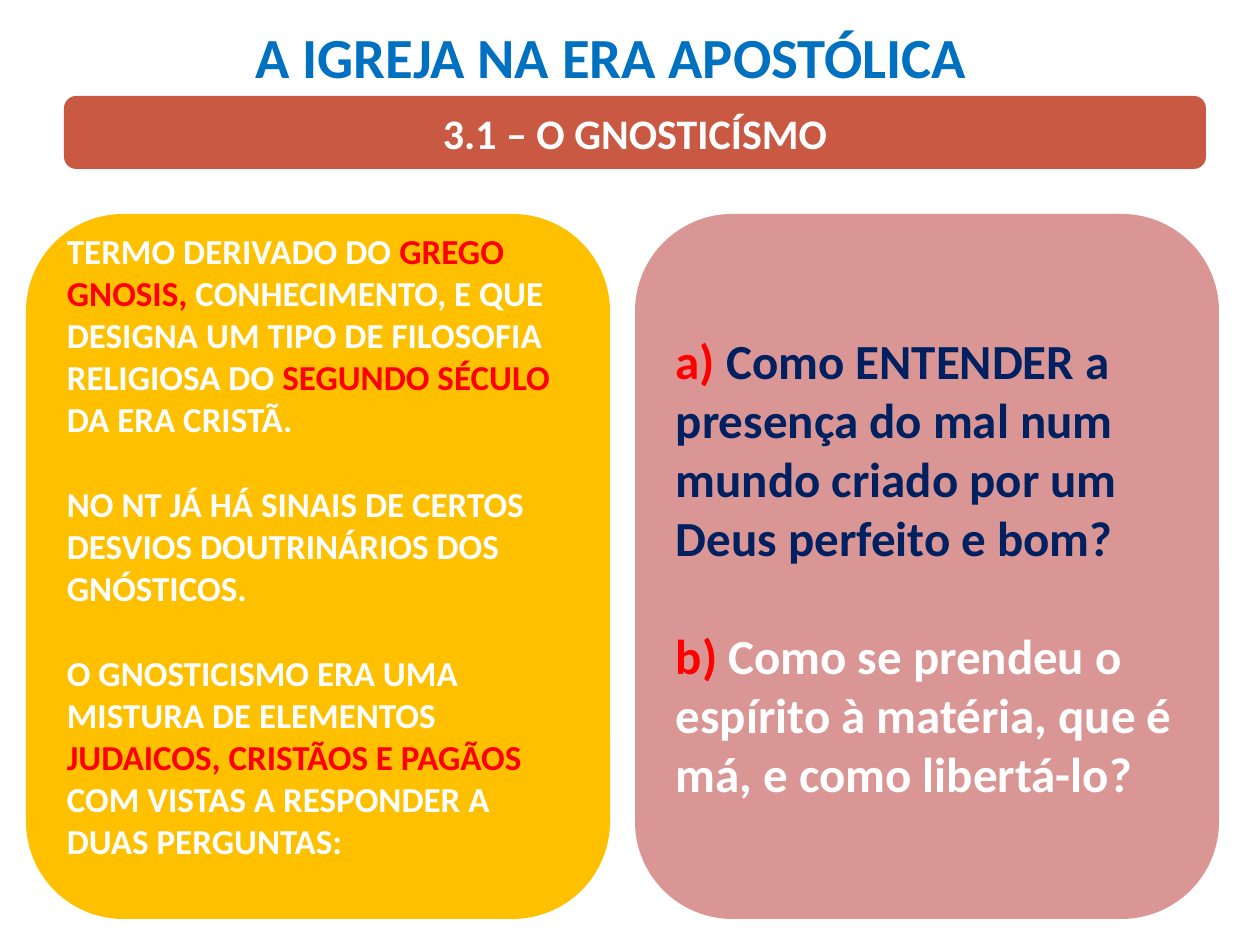
from dataclasses import dataclass

from pptx import Presentation
from pptx.dml.color import RGBColor
from pptx.enum.shapes import MSO_SHAPE
from pptx.enum.text import MSO_ANCHOR, PP_ALIGN
from pptx.slide import Slide
from pptx.util import Emu, Pt

ROUNDED = MSO_SHAPE.ROUNDED_RECTANGLE
TOP, MIDDLE = MSO_ANCHOR.TOP, MSO_ANCHOR.MIDDLE
LEFT, CENTER = PP_ALIGN.LEFT, PP_ALIGN.CENTER
EMU_PER_PX = 914400 / 126
LINE_HEIGHT = 1.22

COLORS = {
    "title": "0070C0",
    "banner": "C95943",
    "definition": "FFC000",
    "questions": "D99694",
    "white": "FFFFFF",
    "red": "FF0000",
    "navy": "002060",
}


def px(length):
    """Turn pixels into EMU."""
    return Emu(round(length * EMU_PER_PX))


@dataclass
class SlideBuilder:
    """Hold the style and the slide, and draw each kind of element."""

    slide: Slide
    font: str = "Calibri"

    def add_text(self, shape, paragraphs, size, align, anchor):
        """Add paragraphs of (text, color) runs, one line apart."""
        frame = shape.text_frame
        frame.word_wrap = True
        frame.vertical_anchor = anchor
        for index, runs in enumerate(paragraphs):
            paragraph = frame.add_paragraph() if index else frame.paragraphs[0]
            paragraph.alignment = align
            if index:
                paragraph.space_before = Pt(round(size * LINE_HEIGHT, 1))
            for text, color in runs:
                run = paragraph.add_run()
                run.text = text
                run.font.name = self.font
                run.font.size = Pt(size)
                run.font.bold = True
                run.font.color.rgb = RGBColor.from_string(COLORS[color])

    def title(self, box, text, size):
        """Add a centred heading."""
        shape = self.slide.shapes.add_textbox(*map(px, box))
        self.add_text(shape, [[(text, "title")]], size, CENTER, TOP)

    def panel(self, box, fill, paragraphs, size, align=LEFT, bottom=6):
        """Add a rounded panel with text."""
        shape = self.slide.shapes.add_shape(ROUNDED, *map(px, box))
        shape.shadow.inherit = False
        shape.fill.solid()
        shape.fill.fore_color.rgb = RGBColor.from_string(COLORS[fill])
        shape.line.fill.background()
        shape.text_frame.margin_bottom = px(bottom)
        self.add_text(shape, paragraphs, size, align, MIDDLE)


def main():
    """Build the slide and save it."""
    presentation = Presentation()
    presentation.slide_width, presentation.slide_height = px(1260), px(945)
    builder = SlideBuilder(presentation.slides.add_slide(presentation.slide_layouts[6]))

    builder.title((44, 16, 1134, 69), "A IGREJA NA ERA APOSTÓLICA", 32.4)
    builder.panel((64, 96, 1142, 73), "banner",
                  [[("3.1 – O GNOSTICÍSMO", "white")]], 24, CENTER)

    definition = [
        [
            ("TERMO DERIVADO DO ", "white"),
            ("GREGO GNOSIS, ", "red"),
            ("CONHECIMENTO, E QUE DESIGNA UM TIPO DE FILOSOFIA RELIGIOSA DO ", "white"),
            ("SEGUNDO SÉCULO ", "red"),
            ("DA ERA CRISTÃ.", "white"),
        ],
        [("NO NT JÁ HÁ SINAIS DE CERTOS DESVIOS DOUTRINÁRIOS DOS GNÓSTICOS.", "white")],
        [
            ("O GNOSTICISMO ERA UMA MISTURA DE ELEMENTOS", "white"),
            (" JUDAICOS, CRISTÃOS E PAGÃOS", "red"),
            (" COM VISTAS A RESPONDER A DUAS PERGUNTAS:", "white"),
        ],
    ]
    questions = [
        [
            ("a) ", "red"),
            ("Como ENTENDER a presença do mal num mundo criado por um Deus perfeito e bom?", "navy"),
        ],
        [
            ("b) ", "red"),
            ("Como se prendeu o espírito à matéria, que é má, e como libertá-lo?", "white"),
        ],
    ]
    builder.panel((26, 214, 584, 705), "definition", definition, 20, bottom=48)
    builder.panel((635, 214, 584, 705), "questions", questions, 28)

    presentation.save("out.pptx")


if __name__ == "__main__":
    main()
